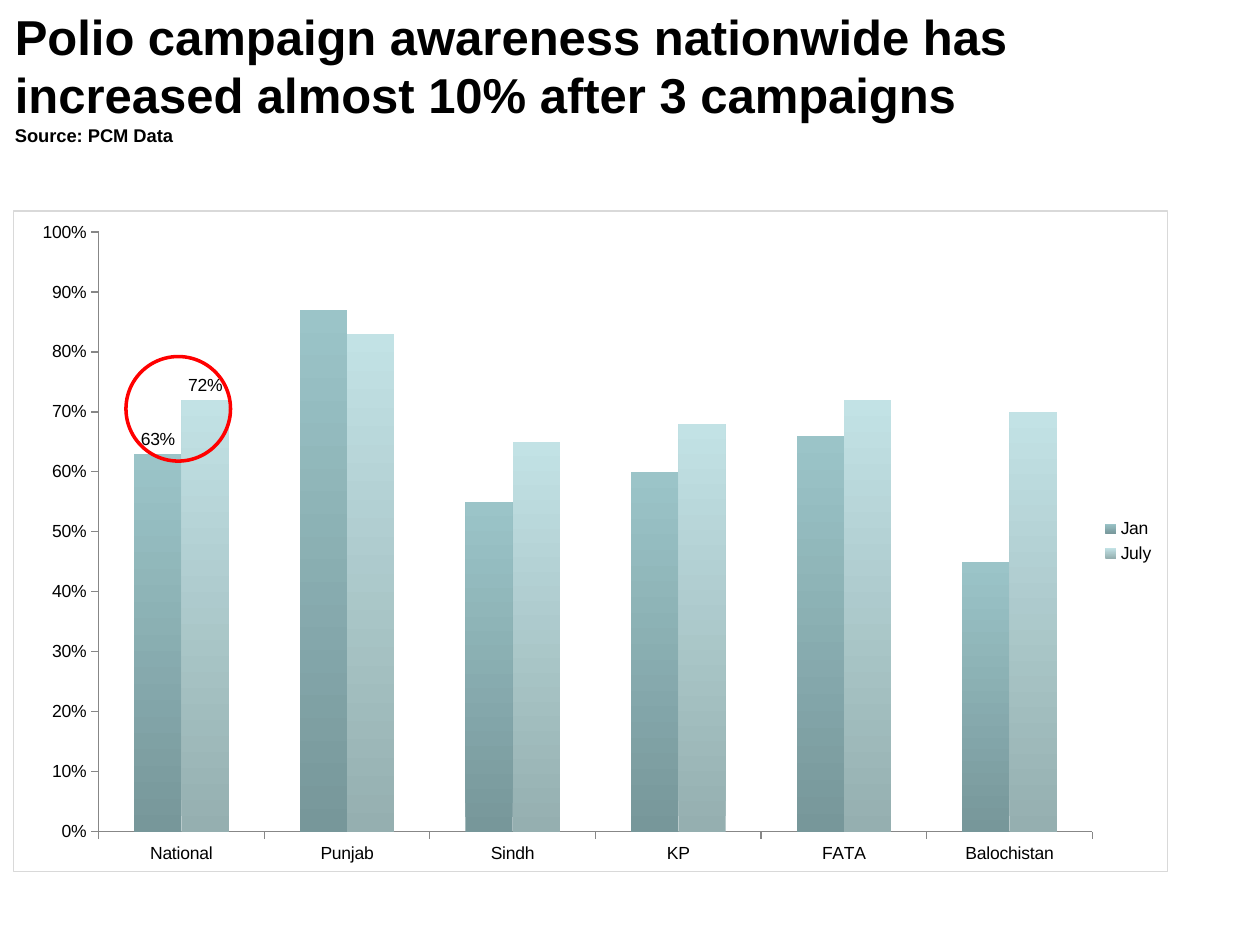
from lxml import etree
from pptx import Presentation
from pptx import util as u
from pptx.chart.data import CategoryChartData
from pptx.dml.color import RGBColor
from pptx.enum import chart as ch, shapes, text
from pptx.oxml import parse_xml
from pptx.oxml.ns import nsdecls, qn

# Content
TITLE = "Polio campaign awareness nationwide has increased almost 10% after 3 campaigns"
SOURCE = "Source: PCM Data"
REGIONS = ["National", "Punjab", "Sindh", "KP", "FATA", "Balochistan"]
AWARENESS = {
    "Jan": [0.63, 0.87, 0.55, 0.60, 0.66, 0.45],
    "July": [0.72, 0.83, 0.65, 0.68, 0.72, 0.70],
}
LABELLED_REGION = REGIONS.index("National")

THEME = {
    "font": "Arial",
    "text": "000000",
    "axis": "878787",
    "border": "D9D9D9",
    "highlight": "FF0000",
    "bars": {"Jan": ("77979A", "9BC4C8"), "July": ("95AFB0", "C2E2E5")},
    "title_size": 28,
    "source_size": 10.5,
    "chart_size": 10,
}

# Left, top, width, height in points
CHART_BOX = (7.2, 120.24, 660.24, 378)
CIRCLE_BOX = (72, 203.76, 59.76, 59.76)
TITLE_BOX = (1.44, 0, 700.56, 125.28)
# Inner plot area as fractions of the chart
PLOT_AREA = {"x": 0.074, "y": 0.032, "w": 0.861, "h": 0.908}


def points(box):
    return [u.Pt(value) for value in box]


def set_font(font, size, bold=False):
    font.name = THEME["font"]
    font.size = u.Pt(size)
    font.bold = bold
    font.color.rgb = RGBColor.from_string(THEME["text"])


def style_line(line, color, width):
    line.color.rgb = RGBColor.from_string(color)
    line.width = u.Pt(width)


def style_axis(axis):
    axis.has_major_gridlines = False
    axis.major_tick_mark = ch.XL_TICK_MARK.OUTSIDE
    axis.minor_tick_mark = ch.XL_TICK_MARK.NONE
    style_line(axis.format.line, THEME["axis"], 0.75)
    set_font(axis.tick_labels.font, THEME["chart_size"])


def style_series(series):
    fill = series.format.fill
    fill.gradient()
    fill.gradient_angle = 90
    for stop, color in zip(fill.gradient_stops, THEME["bars"][series.name]):
        stop.color.rgb = RGBColor.from_string(color)
    series.invert_if_negative = False
    series.data_labels.show_value = False
    label = series.points[LABELLED_REGION].data_label
    set_font(label.font, THEME["chart_size"])
    label.position = ch.XL_LABEL_POSITION.OUTSIDE_END


def set_plot_area(chart):
    plot_area = chart._chartSpace.chart.plotArea
    for layout in plot_area.findall(qn("c:layout")):
        plot_area.remove(layout)
    layout = parse_xml(f"<c:layout {nsdecls('c')}><c:manualLayout/></c:layout>")
    settings = {"layoutTarget": "inner", "xMode": "edge", "yMode": "edge", **PLOT_AREA}
    for tag, value in settings.items():
        etree.SubElement(layout[0], qn(f"c:{tag}")).set("val", str(value))
    plot_area.insert(0, layout)


def set_border(chart):
    chart._chartSpace.chart.addnext(parse_xml(
        f'<c:spPr {nsdecls("c", "a")}><a:noFill/><a:ln w="{u.Pt(0.75)}"><a:solidFill>'
        f'<a:srgbClr val="{THEME["border"]}"/></a:solidFill></a:ln></c:spPr>'))


def add_awareness_chart(slide):
    data = CategoryChartData(number_format="0%")
    data.categories = REGIONS
    for name, values in AWARENESS.items():
        data.add_series(name, values)
    chart = slide.shapes.add_chart(
        ch.XL_CHART_TYPE.COLUMN_CLUSTERED, *points(CHART_BOX), data).chart
    set_font(chart.font, THEME["chart_size"])
    chart.has_title = False
    chart.has_legend = True
    chart.legend.position = ch.XL_LEGEND_POSITION.RIGHT
    chart.legend.include_in_layout = False
    set_font(chart.legend.font, THEME["chart_size"])

    style_axis(chart.category_axis)
    value_axis = chart.value_axis
    style_axis(value_axis)
    value_axis.minimum_scale, value_axis.maximum_scale = 0, 1
    value_axis.major_unit = 0.1
    value_axis.tick_labels.number_format = "0%"
    value_axis.tick_labels.number_format_is_linked = False

    plot = chart.plots[0]
    plot.gap_width = 150
    plot.overlap = 0
    plot.vary_by_categories = False
    for series in plot.series:
        style_series(series)
    set_plot_area(chart)
    set_border(chart)


def add_highlight(slide):
    circle = slide.shapes.add_shape(shapes.MSO_SHAPE.OVAL, *points(CIRCLE_BOX))
    circle.shadow.inherit = False
    circle.fill.background()
    style_line(circle.line, THEME["highlight"], 2)


def add_title(slide):
    frame = slide.shapes.add_textbox(*points(TITLE_BOX)).text_frame
    frame.word_wrap = True
    frame.vertical_anchor = text.MSO_ANCHOR.TOP
    frame.text = f"{TITLE}\n{SOURCE}"
    for paragraph, size in zip(frame.paragraphs, (THEME["title_size"], THEME["source_size"])):
        set_font(paragraph.font, size, bold=True)


def main():
    presentation = Presentation()
    presentation.slide_width, presentation.slide_height = u.Pt(720), u.Pt(540)
    slide = presentation.slides.add_slide(presentation.slide_layouts[6])
    add_awareness_chart(slide)
    add_highlight(slide)
    add_title(slide)
    presentation.save("out.pptx")


if __name__ == "__main__":
    main()
